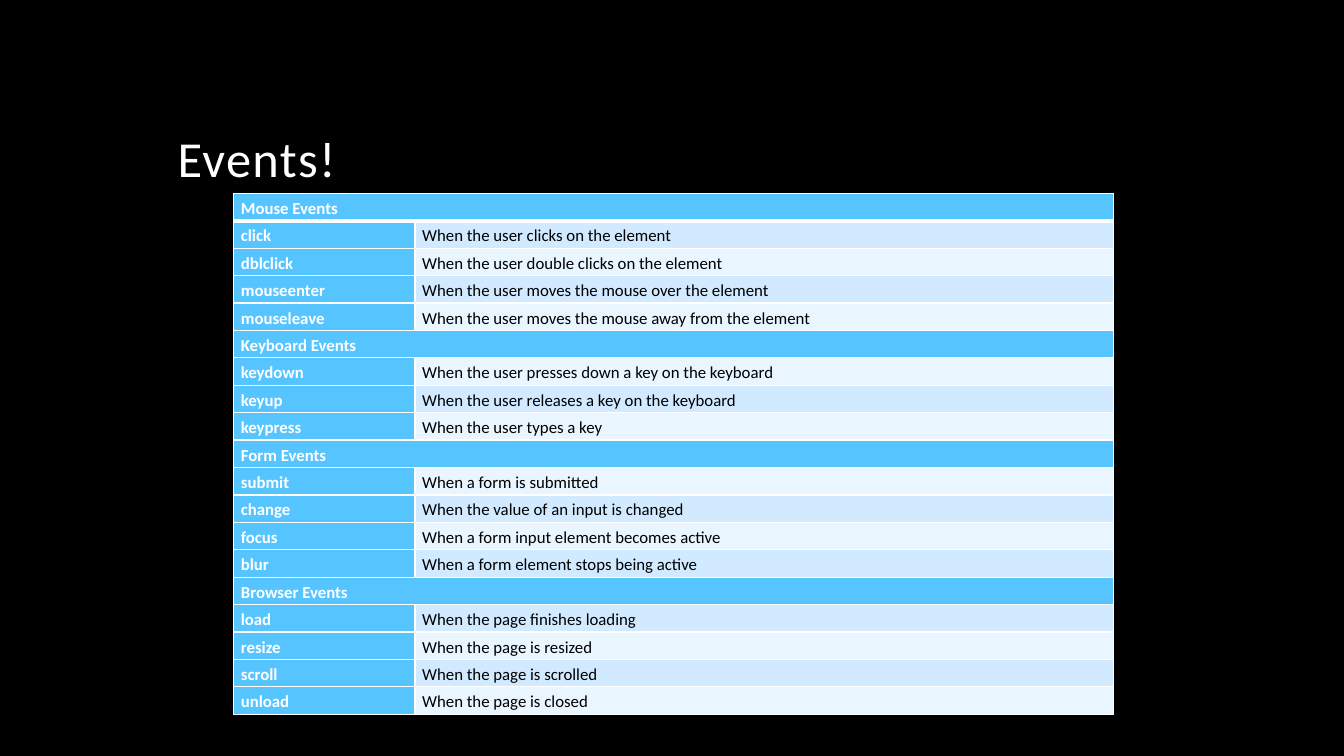
from lxml.etree import SubElement as Sub
from pptx import Presentation
from pptx.dml.color import RGBColor as Rgb
from pptx.enum.text import MSO_ANCHOR as Anchor, PP_ALIGN as Align
from pptx.oxml.ns import qn
from pptx.util import Cm, Pt

BLACK = Rgb(0x00, 0x00, 0x00)
WHITE = Rgb(0xFF, 0xFF, 0xFF)
BLUE = Rgb(0x56, 0xC5, 0xFF)
BANDS = Rgb(0xE9, 0xF5, 0xFF), Rgb(0xD1, 0xEA, 0xFF)

HEAD = {"name": "Calibri", "size": Pt(36)}
KEY = {"name": "Calibri", "size": Pt(12), "bold": True}
NOTE = {**KEY, "bold": False}
INSETS = {"margin_left": Cm(0.18), "margin_right": Cm(0.18),
          "margin_top": 0, "margin_bottom": 0}

EVENTS = {
    "Mouse Events": {
        "click": "When the user clicks on the element",
        "dblclick": "When the user double clicks on the element",
        "mouseenter": "When the user moves the mouse over the element",
        "mouseleave": "When the user moves the mouse away from the element",
    },
    "Keyboard Events": {
        "keydown": "When the user presses down a key on the keyboard",
        "keyup": "When the user releases a key on the keyboard",
        "keypress": "When the user types a key",
    },
    "Form Events": {
        "submit": "When a form is submitted",
        "change": "When the value of an input is changed",
        "focus": "When a form input element becomes active",
        "blur": "When a form element stops being active",
    },
    "Browser Events": {
        "load": "When the page finishes loading",
        "resize": "When the page is resized",
        "scroll": "When the page is scrolled",
        "unload": "When the page is closed",
    },
}


def apply(item, look):
    for name, value in look.items():
        setattr(item, name, value)


def write(para, text, look, color, space):
    para.line_spacing = space
    run = para.add_run()
    run.text = text
    apply(run.font, look)
    run.font.color.rgb = color
    return run


def add_title(slide, box, text):
    frame = slide.shapes.add_textbox(*box).text_frame
    apply(frame, {"word_wrap": True, "vertical_anchor": Anchor.BOTTOM})
    run = write(frame.paragraphs[0], text, HEAD, WHITE, 0.9)
    run.font._element.set("spc", "100")


def add_edges(cell, widths):
    props = cell._tc.get_or_add_tcPr()
    for side, width in widths.items():
        line = Sub(props, qn(f"a:ln{side}"), w=str(Pt(width)))
        fill = Sub(line, qn("a:solidFill"))
        Sub(fill, qn("a:srgbClr"), val=str(WHITE))


def style_cell(cell, fill, widths):
    add_edges(cell, widths)
    cell.fill.solid()
    cell.fill.fore_color.rgb = fill
    apply(cell, INSETS)


def fill_cell(cell, text, look, color):
    para = cell.text_frame.paragraphs[0]
    para.alignment = Align.JUSTIFY
    write(para, text, look, color, 1.25)


def add_events(slide, box, groups):
    rows = []
    for group, events in groups.items():
        rows += [(group, None), *events.items()]
    left, top, width, height = box
    table = slide.shapes.add_table(len(rows), 2, *box).table
    key_width = Cm(4.57)
    table.columns[0].width = key_width
    table.columns[1].width = width - key_width
    for index, (key, note) in enumerate(rows):
        table.rows[index].height = height // len(rows)
        first, second = table.cell(index, 0), table.cell(index, 1)
        widths = {"L": 1, "R": 1, "T": 3 if index == 1 else 1,
                  "B": 3 if index == 0 else 1}
        style_cell(first, BLUE, widths)
        style_cell(second, BANDS[index % 2] if note else BLUE, widths)
        fill_cell(first, key, KEY, WHITE)
        if note:
            fill_cell(second, note, NOTE, BLACK)
        else:
            first.merge(second)


def main():
    deck = Presentation()
    apply(deck, {"slide_width": Cm(33.87), "slide_height": Cm(19.05)})
    slide = deck.slides.add_slide(deck.slide_layouts[6])
    back = slide.background.fill
    back.solid()
    back.fore_color.rgb = BLACK
    add_title(slide, (Cm(4.23), Cm(1.06), Cm(25.4), Cm(3.81)), "Events!")
    add_events(slide, (Cm(5.89), Cm(4.87), Cm(22.17), Cm(13.13)), EVENTS)
    deck.save("out.pptx")


if __name__ == "__main__":
    main()
